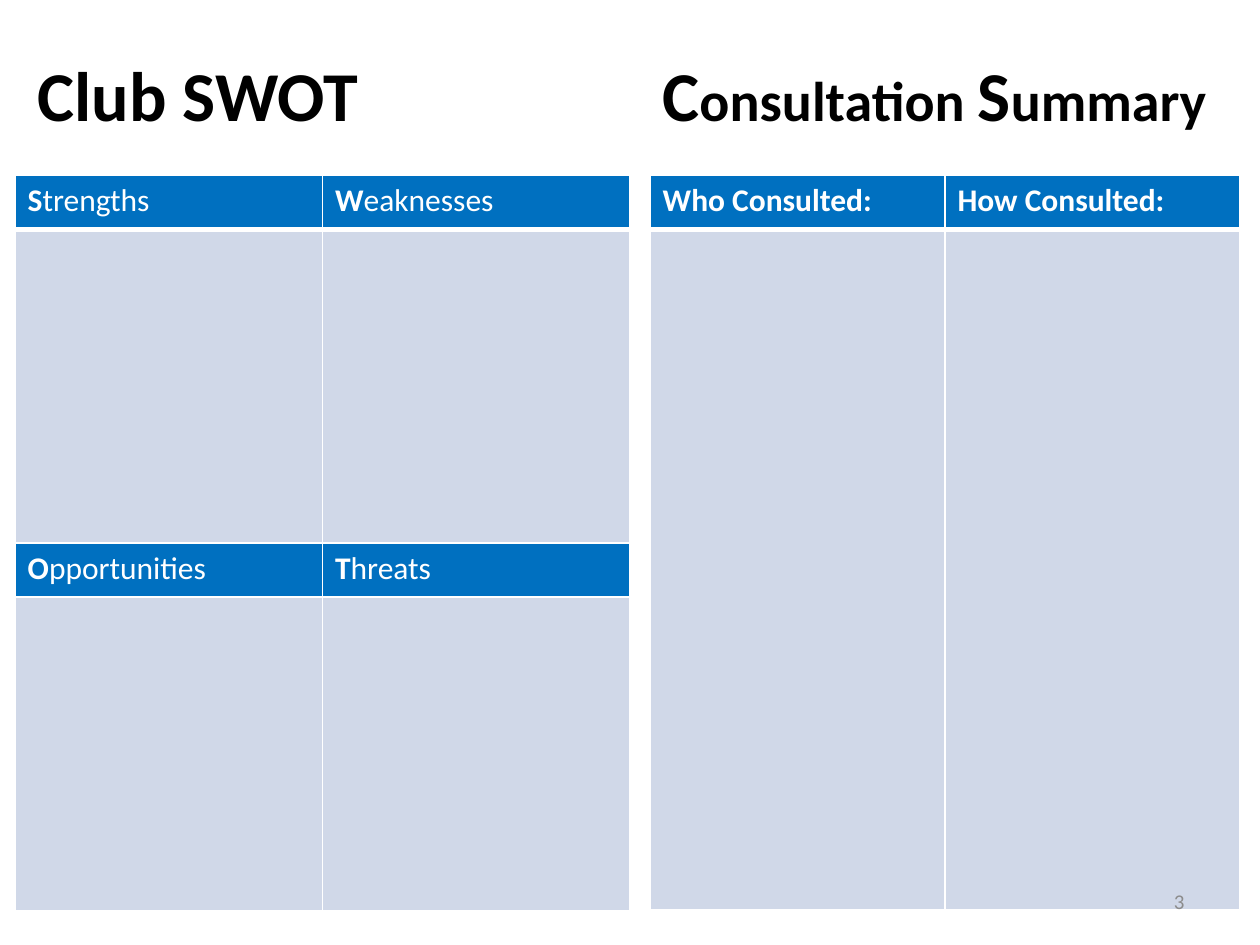
"""Build the Club SWOT and Consultation Summary slide."""
import pptx
import pptx.dml.color
import pptx.enum.text
import pptx.oxml
import pptx.oxml.ns
import pptx.util

Inches = pptx.util.Inches
ANCHOR = pptx.enum.text.MSO_ANCHOR
ALIGN = pptx.enum.text.PP_ALIGN
FIT = pptx.enum.text.MSO_AUTO_SIZE

FONT = "Calibri"
WHITE, BLACK, GREY = "FFFFFF", "000000", "8C8C8C"
HEADER, BODY = "0070C0", "D0D8E8"
HEADER_HEIGHT = 0.43
TABLE_TOP = 1.39

TABLES = [
    {"left": 0.12, "column": 2.44, "body": 2.49, "headers": [
        [[("S", True), ("trengths", False)], [("W", True), ("eaknesses", False)]],
        [[("O", True), ("pportunities", False)], [("T", True), ("hreats", False)]],
    ]},
    {"left": 5.16, "column": 2.34, "body": 5.4, "headers": [
        [[("Who Consulted:", True)], [("How Consulted:", True)]],
    ]},
]
TITLES = [
    ((0.2, 0.36, 2.76, 0.77), [("Club SWOT", 40)]),
    ((5.16, 0.36, 4.57, 0.77),
     [("C", 40), ("onsultation ", 32), ("S", 40), ("ummary", 32)]),
]
PAGE_NUMBER = ((7.17, 6.95, 2.33, 0.4), "3")


def rgb(value):
    return pptx.dml.color.RGBColor.from_string(value)


def add_run(paragraph, text, size, color, bold):
    run = paragraph.add_run()
    run.text = text
    run.font.name = FONT
    run.font.size = pptx.util.Pt(size)
    run.font.bold = bold
    run.font.color.rgb = rgb(color)


def style_cell(cell, fill, bottom_width):
    properties = cell._tc.get_or_add_tcPr()
    for side, width in zip("LRTB", (1, 1, 1, bottom_width)):
        properties.append(pptx.oxml.parse_xml(
            f'<a:ln{side} {pptx.oxml.ns.nsdecls("a")} w="{pptx.util.Pt(width)}">'
            f'<a:solidFill><a:srgbClr val="{WHITE}"/></a:solidFill></a:ln{side}>'))
    cell.fill.solid()
    cell.fill.fore_color.rgb = rgb(fill)


def add_grid(slide, left, column, body, headers):
    heights = [HEADER_HEIGHT, body] * len(headers)
    columns = len(headers[0])
    grid = slide.shapes.add_table(
        len(heights), columns, Inches(left), Inches(TABLE_TOP),
        Inches(column * columns), Inches(sum(heights))).table
    for grid_column in grid.columns:
        grid_column.width = Inches(column)
    for index, height in enumerate(heights):
        grid.rows[index].height = Inches(height)
        is_header = index % 2 == 0
        for position, cell in enumerate(grid.rows[index].cells):
            style_cell(cell, HEADER if is_header else BODY, 3 if index == 0 else 1)
            if is_header:
                for text, bold in headers[index // 2][position]:
                    add_run(cell.text_frame.paragraphs[0], text, 18, WHITE, bold)


def add_label(slide, box, runs, color, bold):
    frame = slide.shapes.add_textbox(*map(Inches, box)).text_frame
    frame.word_wrap = True
    for text, size in runs:
        add_run(frame.paragraphs[0], text, size, color, bold)
    return frame


def main():
    deck = pptx.Presentation()
    deck.slide_width, deck.slide_height = Inches(10), Inches(7.5)
    slide = deck.slides.add_slide(deck.slide_layouts[6])
    for table in TABLES:
        add_grid(slide, **table)
    for box, runs in TITLES:
        add_label(slide, box, runs, BLACK, True).auto_size = FIT.SHAPE_TO_FIT_TEXT
    box, number = PAGE_NUMBER
    footer = add_label(slide, box, [(number, 12)], GREY, False)
    footer.vertical_anchor = ANCHOR.MIDDLE
    footer.paragraphs[0].alignment = ALIGN.RIGHT
    deck.save("out.pptx")


if __name__ == "__main__":
    main()
